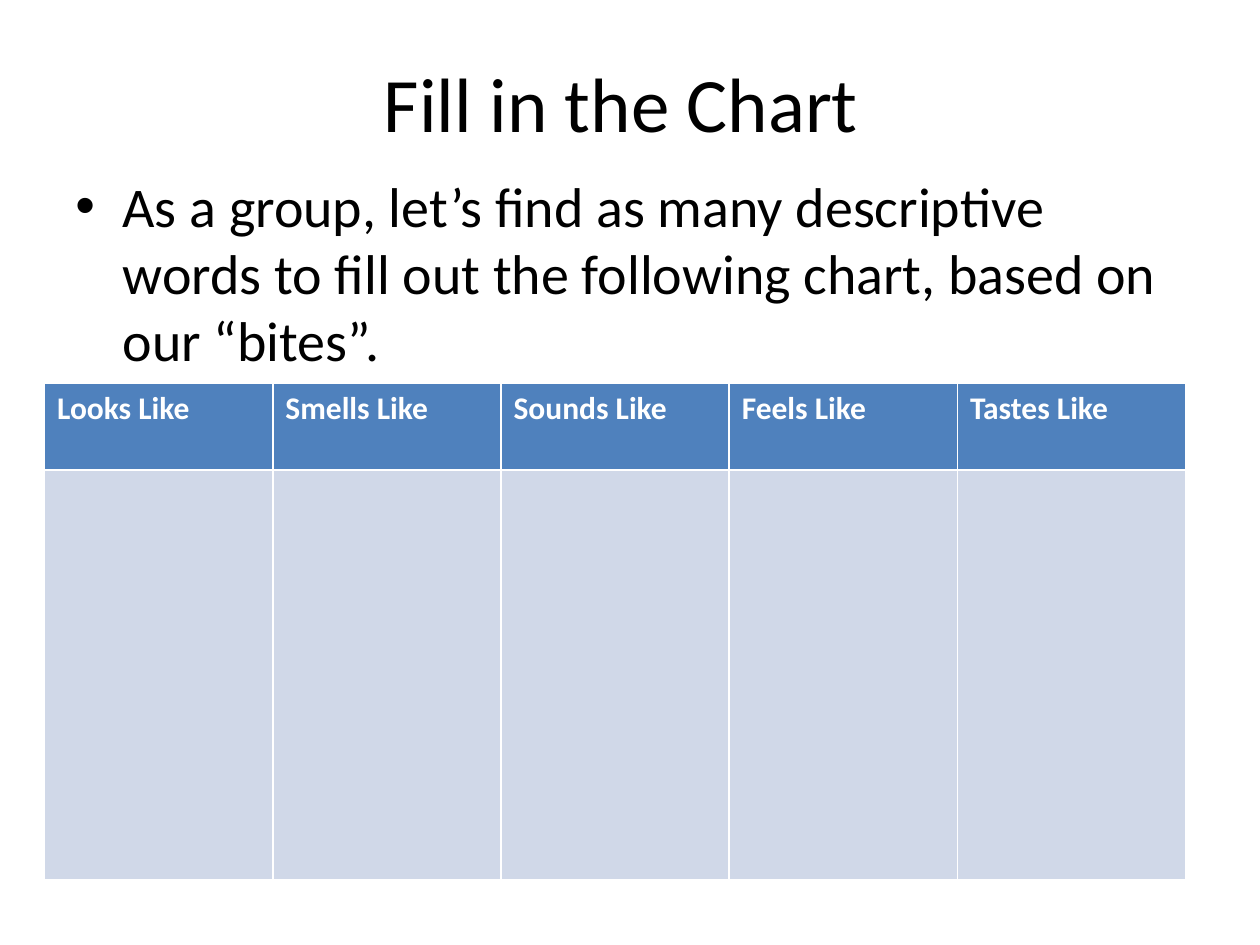
from pptx import Presentation
from pptx.dml.color import RGBColor
from pptx.enum import text
from pptx.oxml.ns import qn
from pptx.util import Pt

TITLE = "Fill in the Chart "
INSTRUCTION = ("As a group, let’s find as many descriptive words to fill out "
               "the following chart, based on our “bites”.")
SENSES = ["Looks Like", "Smells Like", "Sounds Like", "Feels Like", "Tastes Like"]

FONT = "Calibri"
BLACK = RGBColor(0x00, 0x00, 0x00)
WHITE = RGBColor(0xFF, 0xFF, 0xFF)
HEADER_BLUE = RGBColor(0x4F, 0x81, 0xBD)
CELL_BLUE = RGBColor(0xD0, 0xD8, 0xE8)

MARGIN, CONTENT_WIDTH = 36, 648
TITLE_TOP, TITLE_HEIGHT = 21.6, 72.7
BODY_HEIGHT = 388
TABLE_LEFT, TABLE_TOP = 25.5, 219
COLUMN_WIDTH = 130.4
ROW_HEIGHTS = [49.7, 234]
BULLET_INDENT = 27


def set_font(paragraph, size, color, bold=False):
    font = paragraph.font
    font.name, font.size, font.bold = FONT, Pt(size), bold
    font.color.rgb = color


def add_bullet(paragraph, indent):
    """Give the paragraph a hanging round bullet."""
    properties = paragraph._p.get_or_add_pPr()
    properties.set("marL", str(Pt(indent)))
    properties.set("indent", str(Pt(-indent)))
    for tag, name, value in (("a:buFont", "typeface", "Arial"),
                             ("a:buChar", "char", "•")):
        element = properties.makeelement(qn(tag), {name: value})
        properties.insert_element_before(element, "a:tabLst", "a:defRPr", "a:extLst")


def add_title(slide):
    title = slide.shapes.title
    title.left, title.top = Pt(MARGIN), Pt(TITLE_TOP)
    title.width, title.height = Pt(CONTENT_WIDTH), Pt(TITLE_HEIGHT)
    frame = title.text_frame
    frame.text = TITLE
    frame.vertical_anchor = text.MSO_ANCHOR.MIDDLE
    paragraph = frame.paragraphs[0]
    paragraph.alignment = text.PP_ALIGN.CENTER
    set_font(paragraph, 44, BLACK)


def add_instruction(slide):
    box = slide.shapes.add_textbox(Pt(MARGIN), Pt(TITLE_TOP + TITLE_HEIGHT),
                                   Pt(CONTENT_WIDTH), Pt(BODY_HEIGHT))
    box.text_frame.word_wrap = True
    paragraph = box.text_frame.paragraphs[0]
    paragraph.text = INSTRUCTION
    paragraph.space_before = Pt(6.4)
    set_font(paragraph, 32, BLACK)
    add_bullet(paragraph, BULLET_INDENT)


def add_senses_table(slide):
    table = slide.shapes.add_table(
        len(ROW_HEIGHTS), len(SENSES), Pt(TABLE_LEFT), Pt(TABLE_TOP),
        Pt(COLUMN_WIDTH * len(SENSES)), Pt(sum(ROW_HEIGHTS))).table
    for row, height in zip(table.rows, ROW_HEIGHTS):
        row.height = Pt(height)
    for index, sense in enumerate(SENSES):
        table.columns[index].width = Pt(COLUMN_WIDTH)
        header, blank = table.cell(0, index), table.cell(1, index)
        for cell, color in ((header, HEADER_BLUE), (blank, CELL_BLUE)):
            cell.fill.solid()
            cell.fill.fore_color.rgb = color
        header.text = sense
        set_font(header.text_frame.paragraphs[0], 18, WHITE, bold=True)


def main():
    presentation = Presentation()
    presentation.slide_width, presentation.slide_height = Pt(720), Pt(540)
    slide = presentation.slides.add_slide(presentation.slide_layouts[5])
    add_title(slide)
    add_instruction(slide)
    add_senses_table(slide)
    presentation.save("out.pptx")


if __name__ == "__main__":
    main()
